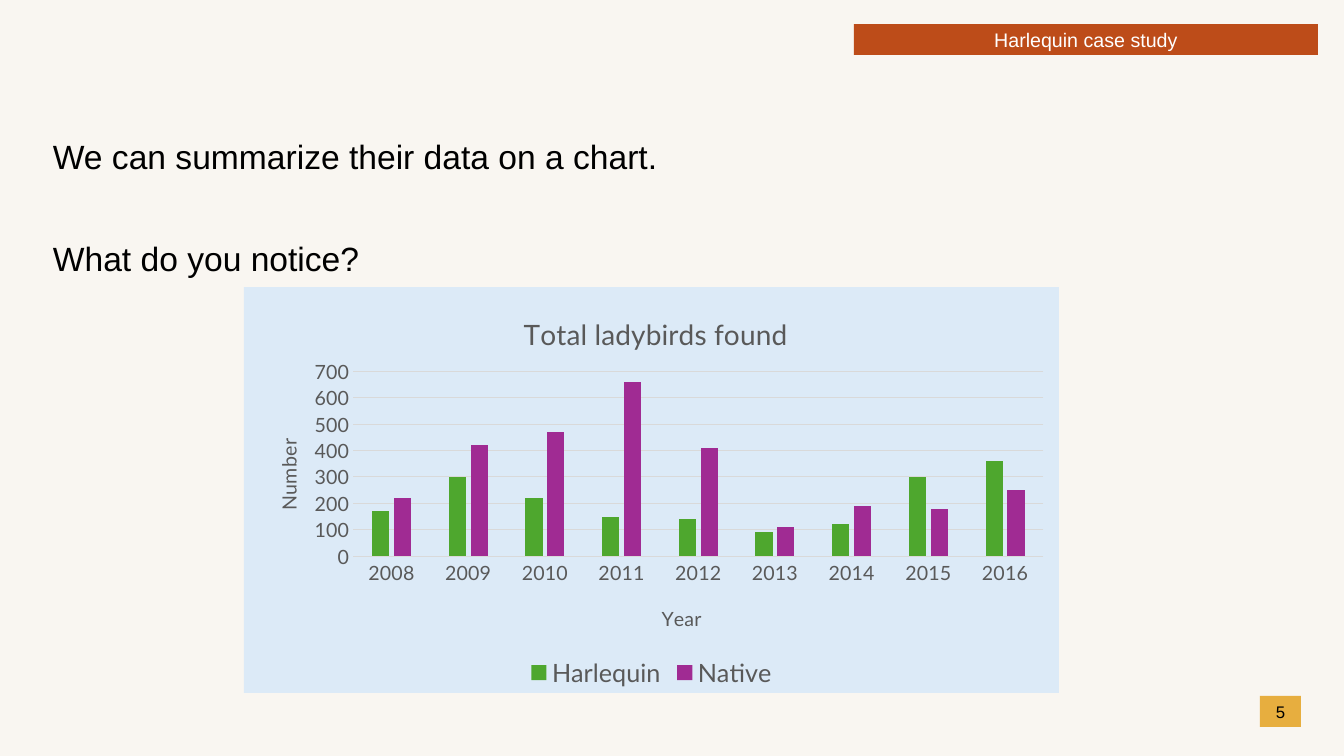
from dataclasses import dataclass

from lxml.etree import SubElement
from pptx import Presentation
from pptx.chart.data import CategoryChartData
from pptx.dml.color import RGBColor
from pptx.enum.chart import XL_CHART_TYPE, XL_LEGEND_POSITION, XL_TICK_MARK
from pptx.enum.shapes import MSO_SHAPE
from pptx.enum.text import MSO_ANCHOR, PP_ALIGN
from pptx.oxml import parse_xml
from pptx.oxml.ns import nsdecls, qn
from pptx.util import Emu, Pt

EMU_PER_PX = 914400 / 100.8

CREAM = RGBColor(0xF9, 0xF6, 0xF1)
GOLD = RGBColor(0xE7, 0xAE, 0x3F)
RUST = RGBColor(0xBD, 0x4C, 0x19)
BLACK = RGBColor(0, 0, 0)
WHITE = RGBColor(0xFF, 0xFF, 0xFF)
GREY = RGBColor(0x59, 0x59, 0x59)
GRID = RGBColor(0xD9, 0xD9, 0xD9)
CHART_BLUE = RGBColor(0xDC, 0xEA, 0xF7)


@dataclass(frozen=True)
class Box:
    x: int
    y: int
    w: int
    h: int

    def emu(self) -> list[Emu]:
        return [px(v) for v in (self.x, self.y, self.w, self.h)]


@dataclass(frozen=True)
class Panel:
    box: Box
    fill: RGBColor
    text: str = ""
    size: int = 12
    color: RGBColor = BLACK


@dataclass(frozen=True)
class Series:
    name: str
    values: tuple[int, ...]
    color: RGBColor


PANELS = (
    Panel(Box(0, 0, 1344, 759), CREAM),
    Panel(Box(1260, 696, 41, 31), GOLD, "5"),
    Panel(Box(854, 24, 464, 31), RUST, "Harlequin case study", 14, WHITE),
)
BODY_BOX = Box(43, 135, 1258, 186)
BODY_LINES = ("We can summarize their data on a chart.", "What do you notice?")
CHART_BOX = Box(244, 287, 815, 406)
YEARS = [str(year) for year in range(2008, 2017)]
SERIES = (
    Series("Harlequin", (170, 300, 220, 150, 140, 90, 120, 300, 360), RGBColor(0x4E, 0xA7, 0x2E)),
    Series("Native", (220, 420, 470, 660, 410, 110, 190, 180, 250), RGBColor(0xA0, 0x2B, 0x93)),
)


def px(value: int) -> Emu:
    return Emu(round(value * EMU_PER_PX))


def style_font(font, size: int, color: RGBColor, name: str) -> None:
    font.size, font.name, font.bold = Pt(size), name, False
    font.color.rgb = color


def add_panel(slide, panel: Panel) -> None:
    sp = slide.shapes.add_shape(MSO_SHAPE.RECTANGLE, *panel.box.emu())
    sp.shadow.inherit = False
    sp.fill.solid()
    sp.fill.fore_color.rgb = panel.fill
    sp.line.fill.background()
    if panel.text:
        tf = sp.text_frame
        tf.text = panel.text
        tf.margin_top = tf.margin_bottom = 0
        tf.vertical_anchor = MSO_ANCHOR.MIDDLE
        p = tf.paragraphs[0]
        p.alignment = PP_ALIGN.CENTER
        style_font(p.runs[0].font, panel.size, panel.color, "Arial")


def add_body(slide) -> None:
    tf = slide.shapes.add_textbox(*BODY_BOX.emu()).text_frame
    tf.word_wrap = True
    tf.text = "\n".join(BODY_LINES)
    for i, p in enumerate(tf.paragraphs):
        p.line_spacing = 0.9
        p.space_before = Pt(47 if i else 0)
        style_font(p.runs[0].font, 24, BLACK, "Arial")


def set_layout(parent, index: int, **settings) -> None:
    """Place a chart part by hand; the layout is child number index of parent."""
    layout = parent.find(qn("c:layout"))
    if layout is None:
        layout = parse_xml(f"<c:layout {nsdecls('c')}/>")
        parent.insert(index, layout)
    manual = SubElement(layout, qn("c:manualLayout"))
    for tag, value in settings.items():
        SubElement(manual, qn(f"c:{tag}")).set("val", str(value))


def set_title(owner, text: str, size: int, x: int, y: int) -> None:
    """Title a chart or an axis, with its top left corner at x, y on the slide."""
    title = owner.chart_title if hasattr(owner, "chart_title") else owner.axis_title
    title.text_frame.text = text
    style_font(title.text_frame.paragraphs[0].runs[0].font, size, GREY, "Lato")
    set_layout(title._element, 1, xMode="edge", yMode="edge",
               x=round((x - CHART_BOX.x) / CHART_BOX.w, 3),
               y=round((y - CHART_BOX.y) / CHART_BOX.h, 3))


def fill_chart_area(chart) -> None:
    area = parse_xml(
        f'<c:spPr {nsdecls("c", "a")}><a:solidFill><a:srgbClr val="{CHART_BLUE}"/></a:solidFill>'
        "<a:ln><a:noFill/></a:ln></c:spPr>")
    chart._chartSpace.find(qn("c:chart")).addnext(area)


def style_axes(chart) -> None:
    years, counts = chart.category_axis, chart.value_axis
    for axis in (years, counts):
        axis.major_tick_mark = axis.minor_tick_mark = XL_TICK_MARK.NONE
        style_font(axis.tick_labels.font, 14, GREY, "Lato")
    counts.minimum_scale, counts.maximum_scale, counts.major_unit = 0, 700, 100
    counts.has_major_gridlines = True
    counts.format.line.fill.background()
    for line in (years.format.line, counts.major_gridlines.format.line):
        line.color.rgb = GRID
        line.width = Pt(0.75)
    set_title(years, "Year", 14, 658, 601)
    set_title(counts, "Number", 14, 271, 435)
    body = counts.axis_title._element.find(".//" + qn("a:bodyPr"))
    body.set("rot", "-5400000")
    body.set("vert", "horz")


def add_ladybird_chart(slide) -> None:
    data = CategoryChartData()
    data.categories = YEARS
    for series in SERIES:
        data.add_series(series.name, series.values)
    chart = slide.shapes.add_chart(
        XL_CHART_TYPE.COLUMN_CLUSTERED, *CHART_BOX.emu(), data).chart
    style_font(chart.font, 10, BLACK, "Lato")
    fill_chart_area(chart)
    set_title(chart, "Total ladybirds found", 20, 519, 309)

    plot = chart.plots[0]
    plot.gap_width, plot.overlap, plot.vary_by_categories = 219, -27, False
    for bars, series in zip(plot.series, SERIES):
        bars.format.fill.solid()
        bars.format.fill.fore_color.rgb = series.color
    style_axes(chart)
    set_layout(chart._chartSpace.find(".//" + qn("c:plotArea")), 0, layoutTarget="inner",
               xMode="edge", yMode="edge", x=0.134, y=0.208, w=0.847, h=0.455)

    chart.has_legend = True
    chart.legend.position = XL_LEGEND_POSITION.BOTTOM
    chart.legend.include_in_layout = False
    style_font(chart.legend.font, 18, GREY, "Lato")


def main() -> None:
    prs = Presentation()
    prs.slide_width, prs.slide_height = px(1344), px(756)
    slide = prs.slides.add_slide(prs.slide_layouts[6])
    for panel in PANELS:
        add_panel(slide, panel)
    add_body(slide)
    add_ladybird_chart(slide)
    prs.save("out.pptx")


if __name__ == "__main__":
    main()
